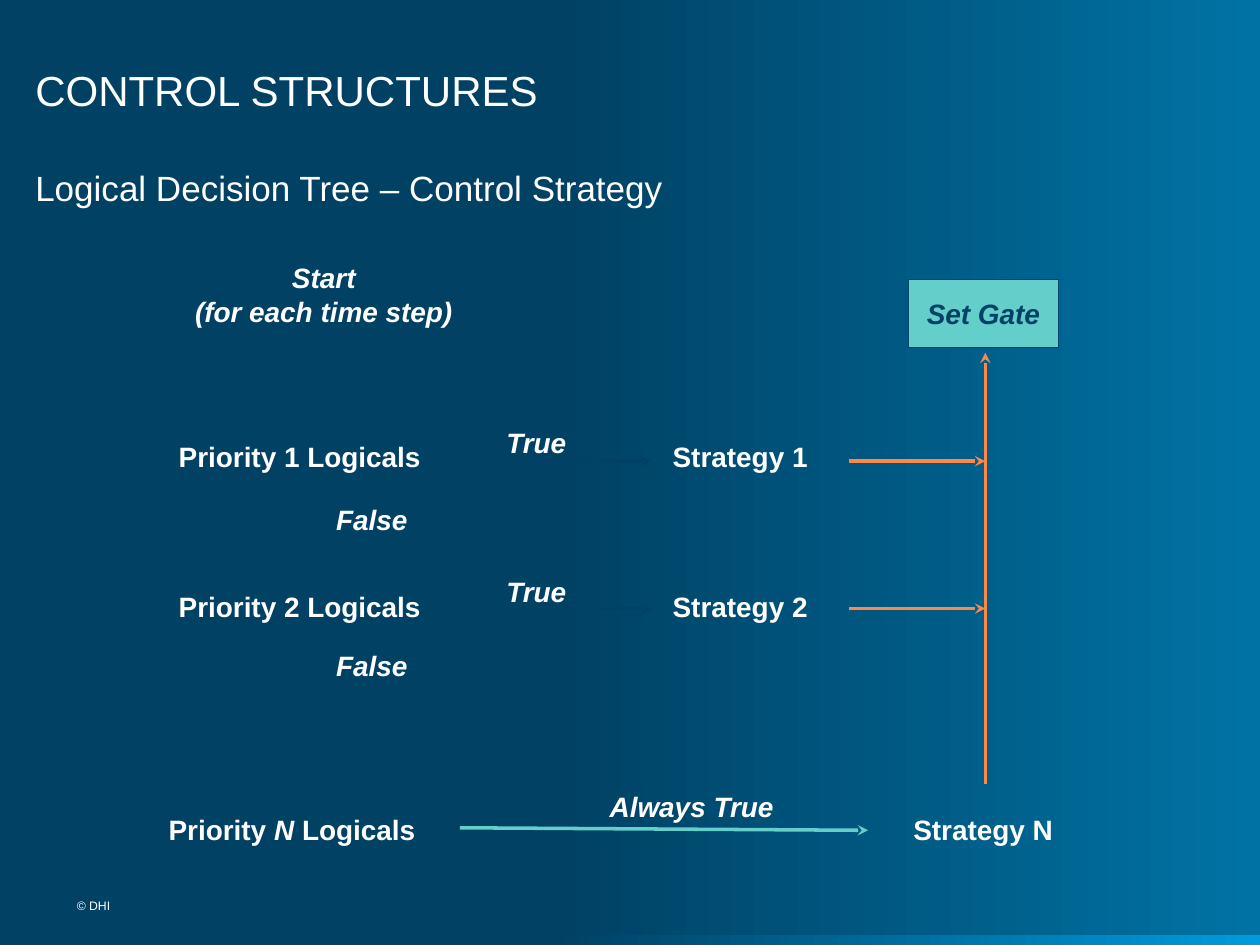
from lxml import etree
from pptx import Presentation
from pptx.dml.color import RGBColor
from pptx.enum.dml import MSO_LINE_DASH_STYLE as Dash
from pptx.enum.shapes import MSO_CONNECTOR as Connector, MSO_SHAPE as Shape
from pptx.enum.text import MSO_ANCHOR as Anchor, MSO_AUTO_SIZE as AutoSize, PP_ALIGN as Align
from pptx.oxml.ns import qn
from pptx.util import Inches, Pt

NAVY, BLUE, SKY = "004164", "0073A4", "009BDC"
INK, TEAL, ORANGE, WHITE = "004165", "63CECA", "FF8849", "FFFFFF"


def color(value):
    return RGBColor.from_string(value)


def place(shape, *box):
    for name, value in zip(("left", "top", "width", "height"), box):
        setattr(shape, name, Inches(value))


class SlideBuilder:
    label_format = {"name": "Arial", "size": Pt(16), "bold": True, "italic": False}

    def __init__(self, presentation):
        self.slide = presentation.slides.add_slide(presentation.slide_layouts[5])
        self.shapes = self.slide.shapes

    def gradient(self, fill, *colors):
        fill.gradient()
        fill.gradient_angle = 0
        for stop, position, value in zip(fill.gradient_stops, (0.44, 1), colors):
            stop.position = position
            stop.color.rgb = color(value)

    def add_text(self, frame, lines, align=Align.LEFT, ink=WHITE, **changes):
        for index, parts in enumerate(lines):
            paragraph = frame.add_paragraph() if index else frame.paragraphs[0]
            paragraph.alignment = align
            for text, run_changes in parts:
                run = paragraph.add_run()
                run.text = text
                run.font.color.rgb = color(ink)
                for name, value in {**self.label_format, **changes, **run_changes}.items():
                    setattr(run.font, name, value)

    def frame(self, shape, **values):
        margins = dict.fromkeys(("margin_left", "margin_top", "margin_right", "margin_bottom"), 0)
        for name, value in {**margins, **values}.items():
            setattr(shape.text_frame, name, value)
        return shape.text_frame

    def title(self, text, *box):
        title = self.shapes.title
        place(title, *box)
        frame = self.frame(title, vertical_anchor=Anchor.BOTTOM, auto_size=AutoSize.NONE)
        self.add_text(frame, [[(text, {})]], size=Pt(24), bold=False)

    def plain_text(self, text, size, *box):
        textbox = self.shapes.add_textbox(*map(Inches, box))
        frame = self.frame(textbox, word_wrap=True)
        self.add_text(frame, [[(text, {})]], size=Pt(size), bold=False)

    def label(self, lines, left, top, width, height=0.37, **format_values):
        textbox = self.shapes.add_textbox(*map(Inches, (left, top, width, height)))
        textbox.text_frame.word_wrap = False
        textbox.text_frame.auto_size = AutoSize.SHAPE_TO_FIT_TEXT
        if isinstance(lines, str):
            lines = [[(line, {})] for line in lines.split("\n")]
        self.add_text(textbox.text_frame, lines, **format_values)
        return textbox

    def rectangle(self, *box):
        shape = self.shapes.add_shape(Shape.RECTANGLE, *map(Inches, box))
        shape.shadow.inherit = False
        return shape

    def strip(self, *box):
        shape = self.rectangle(*box)
        self.gradient(shape.fill, NAVY, SKY)
        shape.line.fill.background()

    def node(self, text, *box):
        shape = self.rectangle(*box)
        shape.fill.solid()
        shape.fill.fore_color.rgb = color(TEAL)
        shape.line.color.rgb = color(INK)
        shape.line.width = Pt(0.75)
        frame = self.frame(shape, word_wrap=False, vertical_anchor=Anchor.MIDDLE)
        self.add_text(frame, [[(text, {})]], align=Align.CENTER, ink=INK, italic=True)

    def arrow(self, start, end, ink=INK, dash=None):
        connector = self.shapes.add_connector(Connector.STRAIGHT, *map(Inches, (*start, *end)))
        connector.line.color.rgb = color(ink)
        connector.line.width = Pt(2)
        if dash:
            connector.line.dash_style = dash
        properties = connector.element.spPr
        line = properties.find(qn("a:ln"))
        etree.SubElement(line, qn("a:tailEnd"), type="stealth")
        etree.SubElement(properties, qn("a:effectLst"))
        return connector


def main():
    presentation = Presentation()
    presentation.slide_width = Inches(10)
    presentation.slide_height = Inches(7.5)
    builder = SlideBuilder(presentation)
    builder.gradient(builder.slide.background.fill, NAVY, BLUE)

    builder.strip(0, 7.42, 10, 0.08)
    builder.title("CONTROL STRUCTURES", 0.28, 0.25, 8.6, 0.66)
    builder.plain_text("Logical Decision Tree – Control Strategy", 20, 0.28, 1.32, 9.45, 0.4)
    builder.plain_text("© DHI", 7, 0.61, 7.13, 1.55, 0.19)

    flow_x, gate_x = 2.57, 7.82
    start = builder.label("Start\n(for each time step)", 1.44, 2.02, 2.26, 0.64,
                          align=Align.CENTER, italic=True)
    builder.node("Set Gate", 7.21, 2.22, 1.19, 0.54)
    builder.arrow((flow_x, 2.66), (flow_x, 3.41)).begin_connect(start, 2)

    priorities = (
        (1, 3.44, 3.66, 3.33, 3.94, (3.83, 4.66), None),
        (2, 4.63, 4.83, 4.51, 5.1, (5.02, 6.34), Dash.DASH),
    )
    for number, top, arrow_y, true_top, false_top, (down_from, down_to), dash in priorities:
        builder.label(f"Priority {number} Logicals", 1.32, top, 2.13)
        builder.label(f"Strategy {number}", 5.24, top, 1.28)
        builder.arrow((3.5, arrow_y), (5.17, arrow_y))
        builder.label("True", 3.92, true_top, 0.68, italic=True)
        builder.arrow((flow_x, down_from), (flow_x, down_to), dash=dash)
        builder.label("False", flow_x, false_top, 0.77, italic=True)
        builder.arrow((6.74, arrow_y), (gate_x, arrow_y), ORANGE)

    builder.label([[("Priority ", {}), ("N ", {"italic": True}), ("Logicals", {})]], 1.24, 6.4, 2.17)
    builder.arrow((3.65, 6.57), (6.89, 6.59), TEAL)
    builder.label("Always True", 4.74, 6.22, 1.51, italic=True)
    builder.label("Strategy N", 7.15, 6.4, 1.31)
    builder.arrow((gate_x, 6.22), (gate_x, 2.8), ORANGE)

    presentation.save("out.pptx")


if __name__ == "__main__":
    main()
